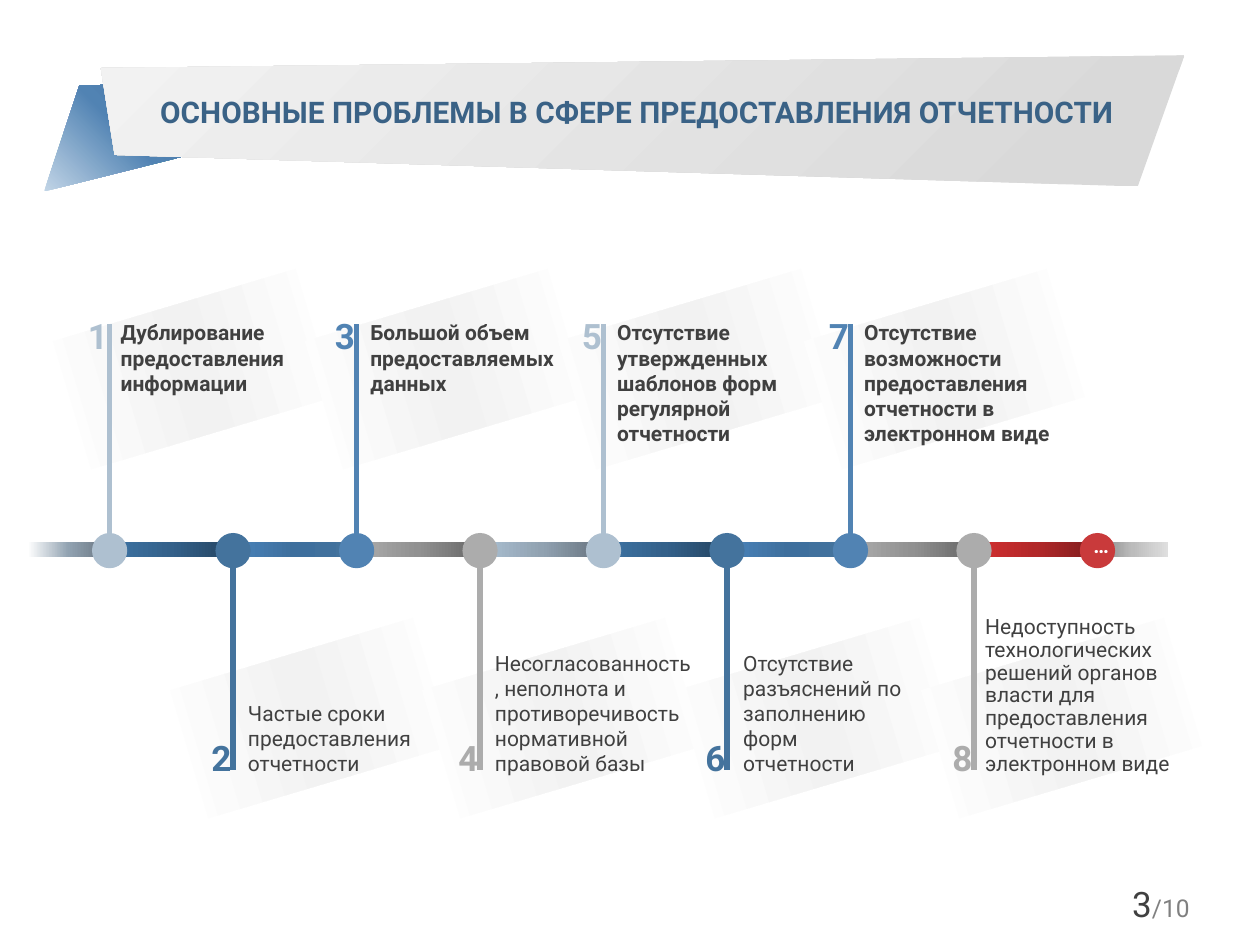
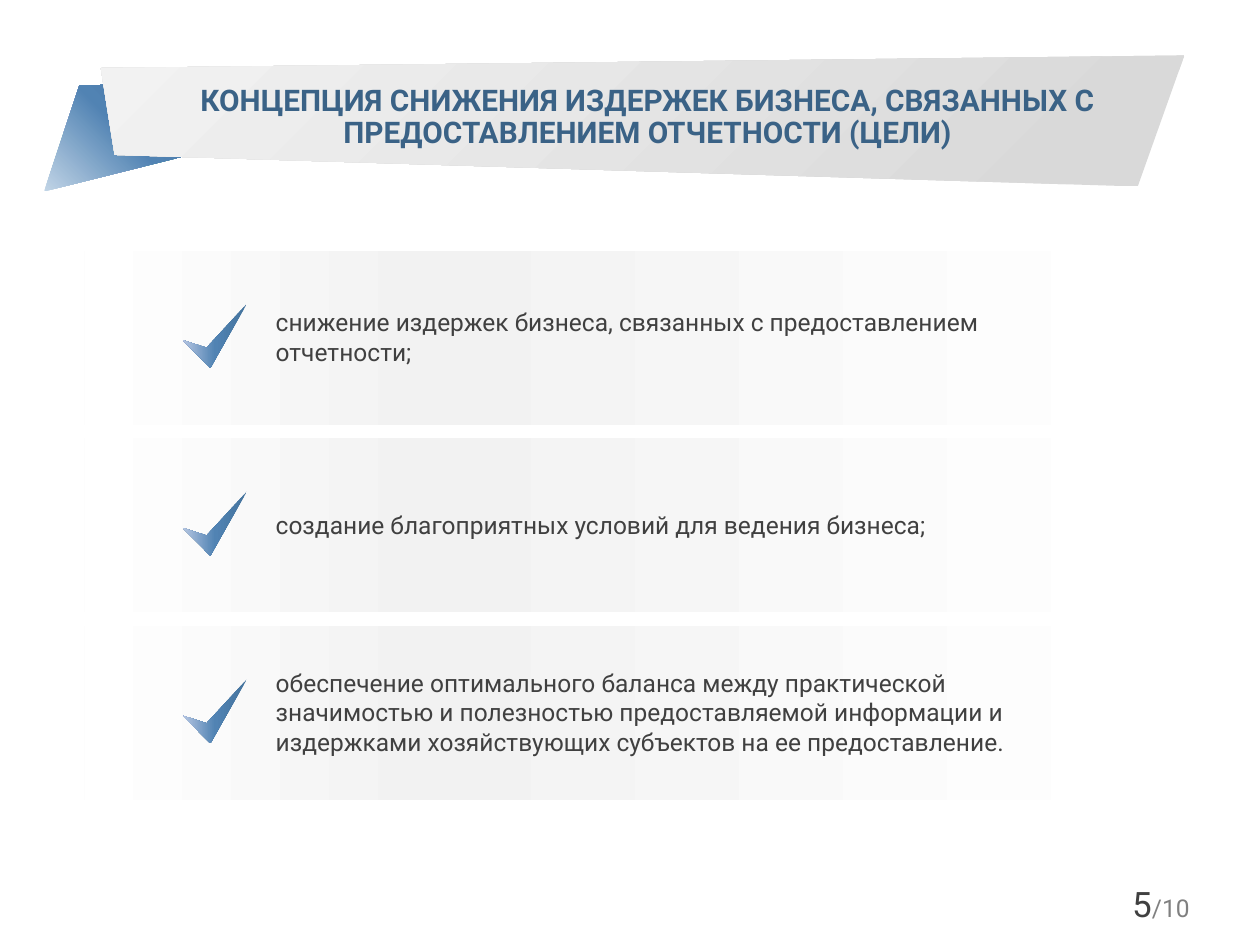
from pptx import Presentation
from pptx.dml.color import RGBColor
from pptx.enum.shapes import MSO_CONNECTOR, MSO_SHAPE
from pptx.enum.text import MSO_ANCHOR, MSO_AUTO_SIZE, PP_ALIGN
from pptx.oxml import parse_xml
from pptx.oxml.ns import nsdecls, qn
from pptx.oxml.xmlchemy import OxmlElement
from pptx.util import Emu, Pt

PX = 9144  # 100 px to the inch
FONT = "Roboto"
LEFT, CENTER, RIGHT = PP_ALIGN.LEFT, PP_ALIGN.CENTER, PP_ALIGN.RIGHT
TOP, MIDDLE = MSO_ANCHOR.TOP, MSO_ANCHOR.MIDDLE
RECTANGLE, OVAL = MSO_SHAPE.RECTANGLE, MSO_SHAPE.OVAL

COLORS = {
    "title": "3A6286", "text": "404040", "muted": "808080", "white": "FFFFFF",
    "light": "AEC0D0", "dark": "44739D", "mid": "5183B3", "gray": "ACACAC", "red": "C93A3B",
}

# Gradient stops as (position in percent, colour)
GRADIENTS = {
    "fold": [(0, "44739D"), (50, "5183B3"), (100, "C2D5E7")],
    "ribbon": [(0, "D9D9D9"), (10, "D9D9D9"), (100, "F2F2F2")],
    "tile": [(0, "FFFFFF"), (50, "F2F2F2"), (100, "FFFFFF")],
    "row": [(0, "FFFFFF"), (68, "F2F2F2"), (100, "FFFFFF")],
    "check": [(0, "44739D"), (50, "5183B3"), (100, "B6C6E2")],
    "start": [(0, "66727D"), (50, "91A2B1"), (100, "FFFFFF")],
    "light": [(0, "66727D"), (50, "91A2B1"), (100, "ABC0D3")],
    "dark": [(0, "244461"), (50, "34618A"), (100, "3D73A4")],
    "mid": [(0, "44739D"), (50, "3E6F9D"), (100, "4A83BA")],
    "gray": [(0, "666666"), (50, "919191"), (100, "ACACAC")],
    "red": [(0, "7D1C1D"), (50, "B22829"), (100, "D42F30")],
    "end": [(0, "848484"), (50, "BCBCBC"), (100, "DFDFDF")],
}

FOLD_POINTS = [(63, 68), (163, 65), (170, 118), (35, 152)]
RIBBON_POINTS = [(80, 54), (940, 44), (903, 148), (91, 123)]
PAGE_TOTAL = 10

PROBLEMS_TITLE = "ОСНОВНЫЕ ПРОБЛЕМЫ В СФЕРЕ ПРЕДОСТАВЛЕНИЯ ОТЧЕТНОСТИ"
# Text, tile left, caption left, caption width, caption height, line spacing
PROBLEMS = [
    ("Дублирование предоставления информации", 53, 86, 156, 71, None),
    ("Частые сроки предоставления отчетности", 146, 187, 167, 71, None),
    ("Большой объем предоставляемых данных", 253, 284, 172, 71, None),
    ("Несогласованность, неполнота и противоречивость нормативной правовой базы",
     346, 383, 178, 111, None),
    ("Отсутствие утвержденных шаблонов форм регулярной отчетности", 454, 480, 167, 111, None),
    ("Отсутствие разъяснений по заполнению форм отчетности", 548, 580, 148, 111, None),
    ("Отсутствие возможности предоставления отчетности в электронном виде",
     649, 676, 218, 91, None),
    ("Недоступность технологических решений органов власти для предоставления "
     "отчетности в электронном виде", 742, 772, 168, 138, Pt(13)),
]
NODE_COLORS = ["light", "dark", "mid", "gray"] * 2 + ["red"]
NODE_START, NODE_STEP, NODE_SIZE, NODE_MIDDLE = 87, 98, 28, 437
BAR_TOP, BAR_HEIGHT, BAR_LEFT, BAR_RIGHT = 430, 12, 22, 927
STEM_ROOT, STEM_TOP, STEM_BOTTOM = 434, 257, 611
CAPTION_TOP, CAPTION_BOTTOM = 249, 622

GOALS_TITLE = ("КОНЦЕПЦИЯ СНИЖЕНИЯ ИЗДЕРЖЕК БИЗНЕСА, СВЯЗАННЫХ С "
               "ПРЕДОСТАВЛЕНИЕМ ОТЧЕТНОСТИ (ЦЕЛИ)")
# Text, text box height
GOALS = [
    ("снижение издержек бизнеса, связанных с предоставлением отчетности;", 57),
    ("создание благоприятных условий для ведения бизнеса;", 34),
    ("обеспечение оптимального баланса между практической значимостью и полезностью "
     "предоставляемой информации и издержками хозяйствующих субъектов на ее предоставление.", 81),
]
ROW_TOP, ROW_STEP, ROW_HEIGHT = 199, 149, 138
CHECK_POINTS = [(196, 42), (164, 77), (145, 71), (167, 93)]  # y from the row top


def px(*lengths):
    return [Emu(round(length * PX)) for length in lengths]


def rgb(color):
    return RGBColor.from_string(COLORS[color])


def fill_gradient(shape, name, angle=None):
    """Fill along an angle, or outward from the top right corner if there is none."""
    stops = "".join(f'<a:gs pos="{position * 1000}"><a:srgbClr val="{color}"/></a:gs>'
                    for position, color in GRADIENTS[name])
    if angle is None:
        direction = '<a:path path="circle"><a:fillToRect l="100000" b="100000"/></a:path>'
    else:
        direction = f'<a:lin ang="{angle * 60000}" scaled="0"/>'
    gradient = parse_xml(f'<a:gradFill {nsdecls("a")} rotWithShape="1">'
                         f'<a:gsLst>{stops}</a:gsLst>{direction}</a:gradFill>')
    shape.fill.background()
    properties = shape._element.spPr
    properties.replace(properties.find(qn("a:noFill")), gradient)


def add_plain_shape(slide, kind, *box):
    shape = slide.shapes.add_shape(kind, *px(*box))
    shape.line.fill.background()
    shape.shadow.inherit = False
    return shape


def add_outline(slide, points, gradient, angle=None):
    builder = slide.shapes.build_freeform(*points[0], scale=PX)
    builder.add_line_segments(points[1:], close=True)
    shape = builder.convert_to_shape()
    shape.line.fill.background()
    shape.shadow.inherit = False
    fill_gradient(shape, gradient, angle)


def write(shape, runs, align=LEFT, anchor=TOP, spacing=None, after=None):
    """Write one paragraph of (text, size, colour, bold) runs."""
    frame = shape.text_frame
    frame.word_wrap = True
    frame.auto_size = MSO_AUTO_SIZE.NONE
    frame.vertical_anchor = anchor
    paragraph = frame.paragraphs[0]
    paragraph.alignment = align
    paragraph.line_spacing = spacing
    paragraph.space_after = after
    for text, size, color, bold in runs:
        run = paragraph.add_run()
        run.text = text
        run.font.name = FONT
        run.font.size = Pt(size)
        run.font.bold = bold
        run.font.color.rgb = rgb(color)


def add_text(slide, box, *runs, **style):
    write(slide.shapes.add_textbox(*px(*box)), runs, **style)


def add_titled_slide(presentation, title, title_box, spacing, page):
    slide = presentation.slides.add_slide(presentation.slide_layouts[5])
    add_outline(slide, FOLD_POINTS, "fold")
    add_outline(slide, RIBBON_POINTS, "ribbon", 225)
    heading = slide.shapes.title
    heading.left, heading.top, heading.width, heading.height = px(*title_box)
    write(heading, [(title, 17, "title", True)], CENTER, MIDDLE, spacing)
    slide.shapes._spTree.append(heading._element)  # bring above the ribbon
    add_text(slide, (729, 697, 225, 40), (str(page), 20, "text", False),
             (f"/{PAGE_TOTAL}", 14, "muted", False), align=RIGHT, anchor=MIDDLE)
    return slide


def add_stem(slide, center, end, color):
    stem = slide.shapes.add_connector(MSO_CONNECTOR.STRAIGHT, *px(center, STEM_ROOT, center, end))
    stem.line.color.rgb = rgb(color)
    stem.line.width = Pt(3)
    stem._element.spPr.append(OxmlElement("a:effectLst"))


def add_bar(slide, left, right, gradient, angle=180):
    bar = add_plain_shape(slide, RECTANGLE, left, BAR_TOP, right - left, BAR_HEIGHT)
    fill_gradient(bar, gradient, angle)


def add_timeline(slide):
    centers = [NODE_START + NODE_STEP * index for index in range(len(NODE_COLORS))]

    for index, problem in enumerate(PROBLEMS):
        tile = add_plain_shape(slide, RECTANGLE, problem[1], 517 if index % 2 else 240, 201, 106)
        tile.rotation = 343.4
        fill_gradient(tile, "tile", 0)

    for index, (text, _, left, width, height, spacing) in enumerate(PROBLEMS):
        below = index % 2 == 1
        center, color = centers[index], NODE_COLORS[index]
        add_stem(slide, center, STEM_BOTTOM if below else STEM_TOP, color)
        top = CAPTION_BOTTOM - height if below else CAPTION_TOP
        add_text(slide, (left, top, width, height), (text, 12, "text", not below), spacing=spacing)
        add_text(slide, (center - 27, 580 if below else 245, 26, 44),
                 (str(index + 1), 20, color, True), align=CENTER)

    add_bar(slide, centers[-1], BAR_RIGHT, "end", 0)
    starts = [BAR_LEFT] + centers[:-1]
    for start, center, gradient in zip(starts, centers, ["start"] + NODE_COLORS[1:]):
        add_bar(slide, start, center, gradient)
    for center, color in zip(centers, NODE_COLORS):
        node = add_plain_shape(slide, OVAL, center - NODE_SIZE // 2, NODE_MIDDLE - NODE_SIZE // 2,
                               NODE_SIZE, NODE_SIZE)
        node.fill.solid()
        node.fill.fore_color.rgb = rgb(color)
    add_text(slide, (centers[-1] - 13, 418, 26, 30), ("…", 12, "white", True), align=CENTER)


def add_goals(slide):
    for index, (text, height) in enumerate(GOALS):
        top = ROW_TOP + ROW_STEP * index
        row = add_plain_shape(slide, RECTANGLE, 67, top, 850, ROW_HEIGHT)
        fill_gradient(row, "row", 180)
        add_text(slide, (209, top + (ROW_HEIGHT - height) // 2, 646, height),
                 (text, 14, "text", False), after=Pt(5))
        add_outline(slide, [(x, top + y) for x, y in CHECK_POINTS], "check", 180)


def main():
    presentation = Presentation()
    presentation.slide_width, presentation.slide_height = px(1000, 750)
    add_timeline(add_titled_slide(presentation, PROBLEMS_TITLE, (101, 52, 809, 76), 0.9, 3))
    add_goals(add_titled_slide(presentation, GOALS_TITLE, (98, 56, 832, 75), Pt(18), 5))
    presentation.save("out.pptx")


if __name__ == "__main__":
    main()
